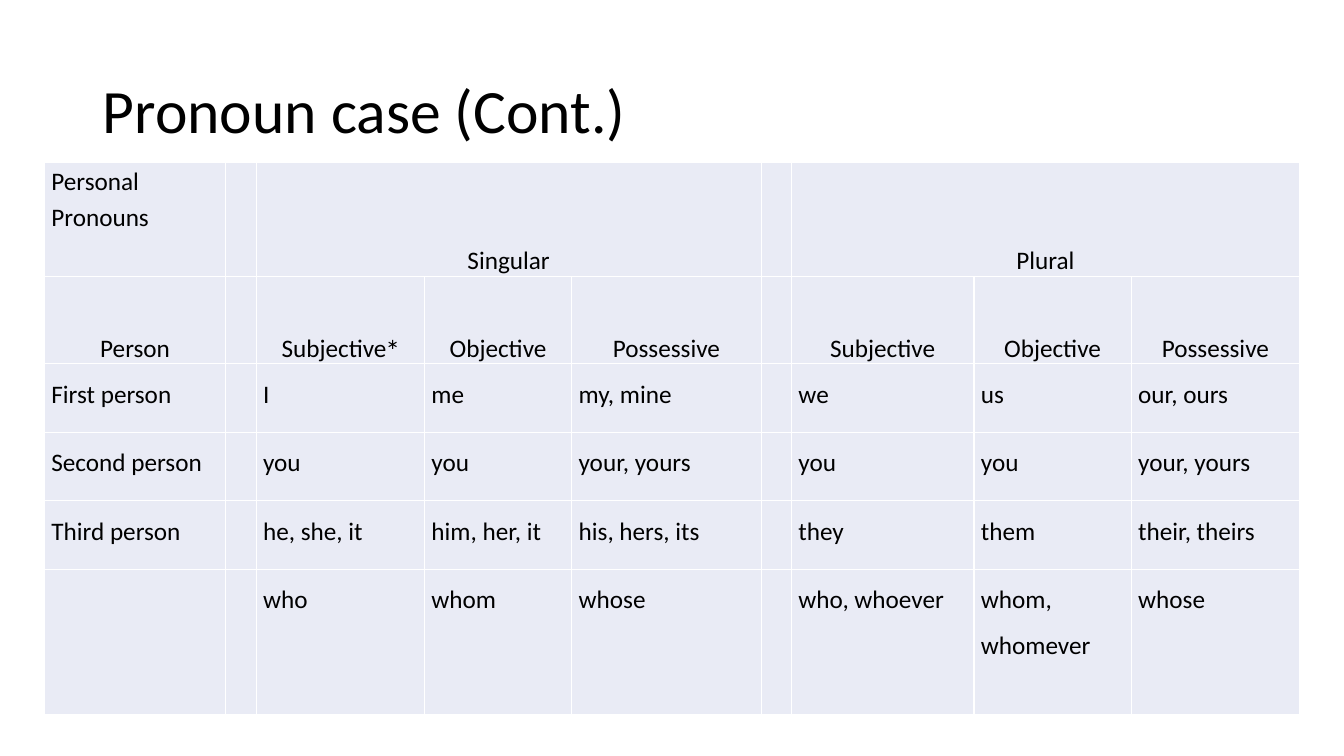
from lxml.etree import SubElement
from pptx import Presentation
from pptx.dml.color import RGBColor
from pptx.enum.text import MSO_ANCHOR as Anchor, PP_ALIGN as Align
from pptx.oxml.ns import qn
from pptx.util import Pt

TITLE = "Pronoun case (Cont.)"
ROWS = [
    ["Personal Pronouns", "", "Singular", "", "", "", "Plural", "", ""],
    ["Person", "", "Subjective∗", "Objective", "Possessive", "",
     "Subjective", "Objective", "Possessive"],
    ["First person", "", "I", "me", "my, mine", "", "we", "us", "our, ours"],
    ["Second person", "", "you", "you", "your, yours", "",
     "you", "you", "your, yours"],
    ["Third person", "", "he, she, it", "him, her, it", "his, hers, its", "",
     "they", "them", "their, theirs"],
    ["", "", "who", "whom", "whose", "", "who, whoever", "whom, whomever", "whose"],
]
COLUMN_WIDTHS = [180, 30, 167, 146, 188, 30, 181, 156, 167]
ROW_HEIGHTS = [113, 87, 68, 68, 68, 144]
GROUP_STARTS = [2, 6]
GROUP_SIZE = 3
SUPERSCRIPT = "∗"

FONT = "Calibri"
BLACK = RGBColor(0x00, 0x00, 0x00)
WHITE = RGBColor(0xFF, 0xFF, 0xFF)
PALE_BLUE = RGBColor(0xE9, 0xEB, 0xF5)


def px(length):
    return length * 9144


def style(para, size, spacing):
    para.line_spacing = spacing
    para.font.name = FONT
    para.font.size = Pt(size)
    para.font.color.rgb = BLACK


def add_borders(cell):
    properties = cell._tc.get_or_add_tcPr()
    for side in ("lnL", "lnR", "lnT", "lnB"):
        line = SubElement(properties, qn(f"a:{side}"), w=str(Pt(1)))
        fill = SubElement(line, qn("a:solidFill"))
        SubElement(fill, qn("a:srgbClr"), val=str(WHITE))


def write_cell(cell, text, row, column):
    para = cell.text_frame.paragraphs[0]
    heading = row == 1 or (row == 0 and column > 0)
    if text:
        cell.margin_left = cell.margin_right = px(7)
        cell.margin_top = cell.margin_bottom = 0
        para.add_run().text = text.removesuffix(SUPERSCRIPT)
    if text.endswith(SUPERSCRIPT):
        mark = para.add_run()
        mark.text = SUPERSCRIPT
        mark._r.get_or_add_rPr().set("baseline", "30000")
    if heading:
        cell.vertical_anchor = Anchor.BOTTOM
        para.alignment = Align.CENTER
    if row == 0 and column < GROUP_STARTS[1]:
        spacing = 1.15
    else:
        spacing = 2.0 if heading else 1.5
    style(para, 18, spacing if text else 1.0)


def add_title(page):
    title = page.shapes.title
    title.left, title.top, title.width, title.height = map(px, (92, 40, 1150, 145))
    title.text = TITLE
    title.text_frame.vertical_anchor = Anchor.MIDDLE
    para = title.text_frame.paragraphs[0]
    para.alignment = Align.LEFT
    style(para, 44, 0.9)


def add_pronoun_table(page):
    frame = page.shapes.add_table(
        len(ROW_HEIGHTS), len(COLUMN_WIDTHS), px(44), px(161),
        px(sum(COLUMN_WIDTHS)), px(sum(ROW_HEIGHTS)))
    table = frame.table
    table.first_row = table.horz_banding = False
    for column, width in zip(table.columns, COLUMN_WIDTHS):
        column.width = px(width)
    for row, height in zip(table.rows, ROW_HEIGHTS):
        row.height = px(height)
    for start in GROUP_STARTS:
        table.cell(0, start).merge(table.cell(0, start + GROUP_SIZE - 1))
    for row, texts in enumerate(ROWS):
        for column, text in enumerate(texts):
            cell = table.cell(row, column)
            add_borders(cell)
            cell.fill.solid()
            cell.fill.fore_color.rgb = PALE_BLUE
            write_cell(cell, text, row, column)


def main():
    deck = Presentation()
    deck.slide_width, deck.slide_height = px(1333), px(750)
    page = deck.slides.add_slide(deck.slide_layouts[5])
    add_title(page)
    add_pronoun_table(page)
    deck.save("out.pptx")


if __name__ == "__main__":
    main()
